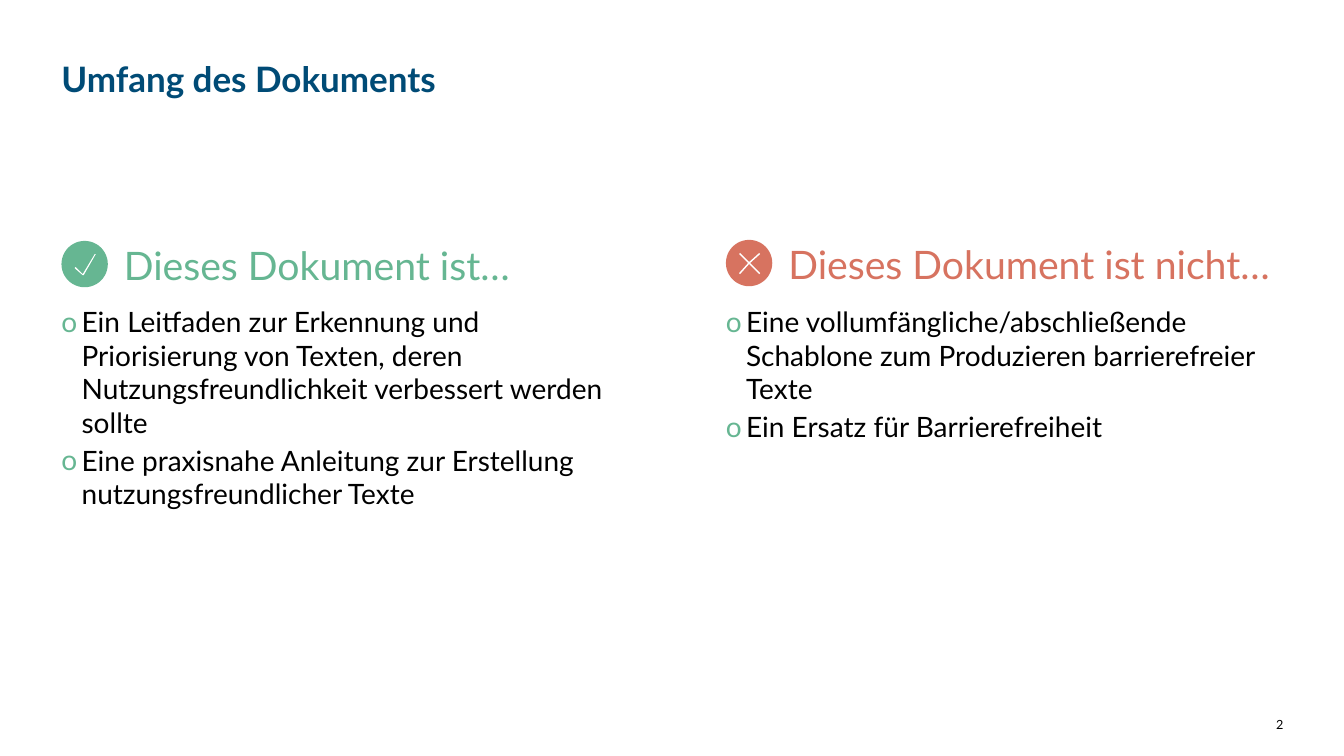
from dataclasses import dataclass

import pptx
import pptx.dml.color
import pptx.enum.shapes
import pptx.enum.text
import pptx.oxml.ns
import pptx.util
from lxml import etree

Inches = pptx.util.Inches
Anchor = pptx.enum.text.MSO_ANCHOR
Align = pptx.enum.text.PP_ALIGN


@dataclass(frozen=True)
class Theme:
    font: str = "Lato"
    navy: str = "004B76"
    green: str = "66B692"
    red: str = "D77360"
    black: str = "000000"
    white: str = "FFFFFF"
    title_size: int = 25
    heading_size: int = 28
    body_size: int = 20
    number_size: int = 9


@dataclass(frozen=True)
class Column:
    left: float
    top: float
    width: float
    body_height: float
    color: str
    heading: str
    mark: tuple[tuple[float, float], ...]
    points: tuple[str, ...]


THEME = Theme()
BADGE = 0.46
BODY_TOP = 3.02

# Outlines of the marks, measured from the corner of the badge
CHECK = ((0.21, 0.34), (0.13, 0.27), (0.14, 0.26), (0.21, 0.33),
         (0.33, 0.13), (0.34, 0.13), (0.22, 0.34))
CROSS = ((0.23, 0.22), (0.33, 0.13), (0.34, 0.14), (0.24, 0.23),
         (0.34, 0.33), (0.33, 0.34), (0.23, 0.24), (0.14, 0.34),
         (0.13, 0.33), (0.22, 0.23), (0.13, 0.14), (0.14, 0.13))

COLUMNS = (
    Column(0.61, 2.39, 5.53, 1.73, THEME.green, "Dieses Dokument ist…", CHECK, (
        "Ein Leitfaden zur Erkennung und Priorisierung von Texten, deren "
        "Nutzungsfreundlichkeit verbessert werden sollte",
        "Eine praxisnahe Anleitung zur Erstellung nutzungsfreundlicher Texte",
    )),
    Column(7.2, 2.38, 5.6, 1.05, THEME.red, "Dieses Dokument ist nicht…", CROSS, (
        "Eine vollumfängliche/abschließende Schablone zum Produzieren "
        "barrierefreier Texte",
        "Ein Ersatz für Barrierefreiheit",
    )),
)


def rgb(color: str) -> pptx.dml.color.RGBColor:
    return pptx.dml.color.RGBColor.from_string(color)


def place(box, left: float, top: float, width: float, height: float) -> None:
    box.left, box.top = Inches(left), Inches(top)
    box.width, box.height = Inches(width), Inches(height)


def prepare_frame(box, anchor=Anchor.TOP):
    frame = box.text_frame
    frame.word_wrap = True
    frame.auto_size = pptx.enum.text.MSO_AUTO_SIZE.NONE
    frame.vertical_anchor = anchor
    frame.margin_left = frame.margin_right = 0
    frame.margin_top = frame.margin_bottom = 0
    return frame


def add_frame(page, left: float, top: float, width: float, height: float,
              anchor=Anchor.TOP):
    box = page.shapes.add_textbox(
        Inches(left), Inches(top), Inches(width), Inches(height))
    return prepare_frame(box, anchor)


def add_span(para, text: str, size: int, color: str, bold: bool = False) -> None:
    span = para.add_run()
    span.text = text
    span.font.name = THEME.font
    span.font.size = pptx.util.Pt(size)
    span.font.bold = bold
    span.font.color.rgb = rgb(color)


def add_bullet(para) -> None:
    para.level = 1
    para.space_after = pptx.util.Pt(3)
    qn = pptx.oxml.ns.qn
    properties = para._p.get_or_add_pPr()
    properties.set("marL", str(Inches(0.2)))
    properties.set("indent", str(Inches(-0.2)))
    color = etree.SubElement(properties, qn("a:buClr"))
    etree.SubElement(color, qn("a:srgbClr"), val=THEME.green)
    etree.SubElement(properties, qn("a:buFont"), typeface=THEME.font)
    etree.SubElement(properties, qn("a:buChar"), char="o")


def paint(shape, color: str) -> None:
    shape.shadow.inherit = False
    shape.fill.solid()
    shape.fill.fore_color.rgb = rgb(color)
    shape.line.fill.background()


def add_badge(page, column: Column) -> None:
    group = page.shapes.add_group_shape()
    disc = group.shapes.add_shape(
        pptx.enum.shapes.MSO_SHAPE.OVAL, Inches(column.left),
        Inches(column.top), Inches(BADGE), Inches(BADGE))
    paint(disc, column.color)
    outline = [(Inches(column.left + x), Inches(column.top + y))
               for x, y in column.mark]
    builder = group.shapes.build_freeform(*outline[0])
    builder.add_line_segments(outline[1:], close=True)
    paint(builder.convert_to_shape(), THEME.white)


def add_column(page, column: Column) -> None:
    heading = add_frame(page, column.left + 0.62, column.top, 4.9, 0.47)
    add_span(heading.paragraphs[0], column.heading, THEME.heading_size, column.color)
    add_badge(page, column)
    body = add_frame(page, column.left, BODY_TOP, column.width, column.body_height)
    for index, point in enumerate(column.points):
        para = body.add_paragraph() if index else body.paragraphs[0]
        add_bullet(para)
        add_span(para, point, THEME.body_size, THEME.black)


def main() -> None:
    deck = pptx.Presentation()
    deck.slide_width, deck.slide_height = Inches(13.33), Inches(7.5)
    page = deck.slides.add_slide(deck.slide_layouts[5])

    # Title
    title = page.shapes.title
    place(title, 0.61, 0.57, 12.12, 0.42)
    para = prepare_frame(title, Anchor.BOTTOM).paragraphs[0]
    para.alignment = Align.LEFT
    add_span(para, "Umfang des Dokuments", THEME.title_size, THEME.navy, bold=True)

    # Scope columns
    for column in COLUMNS:
        add_column(page, column)

    # Page number
    para = add_frame(page, 12.37, 7.11, 0.36, 0.15, Anchor.BOTTOM).paragraphs[0]
    para.alignment = Align.RIGHT
    add_span(para, "2", THEME.number_size, THEME.black)

    deck.save("out.pptx")


if __name__ == "__main__":
    main()
